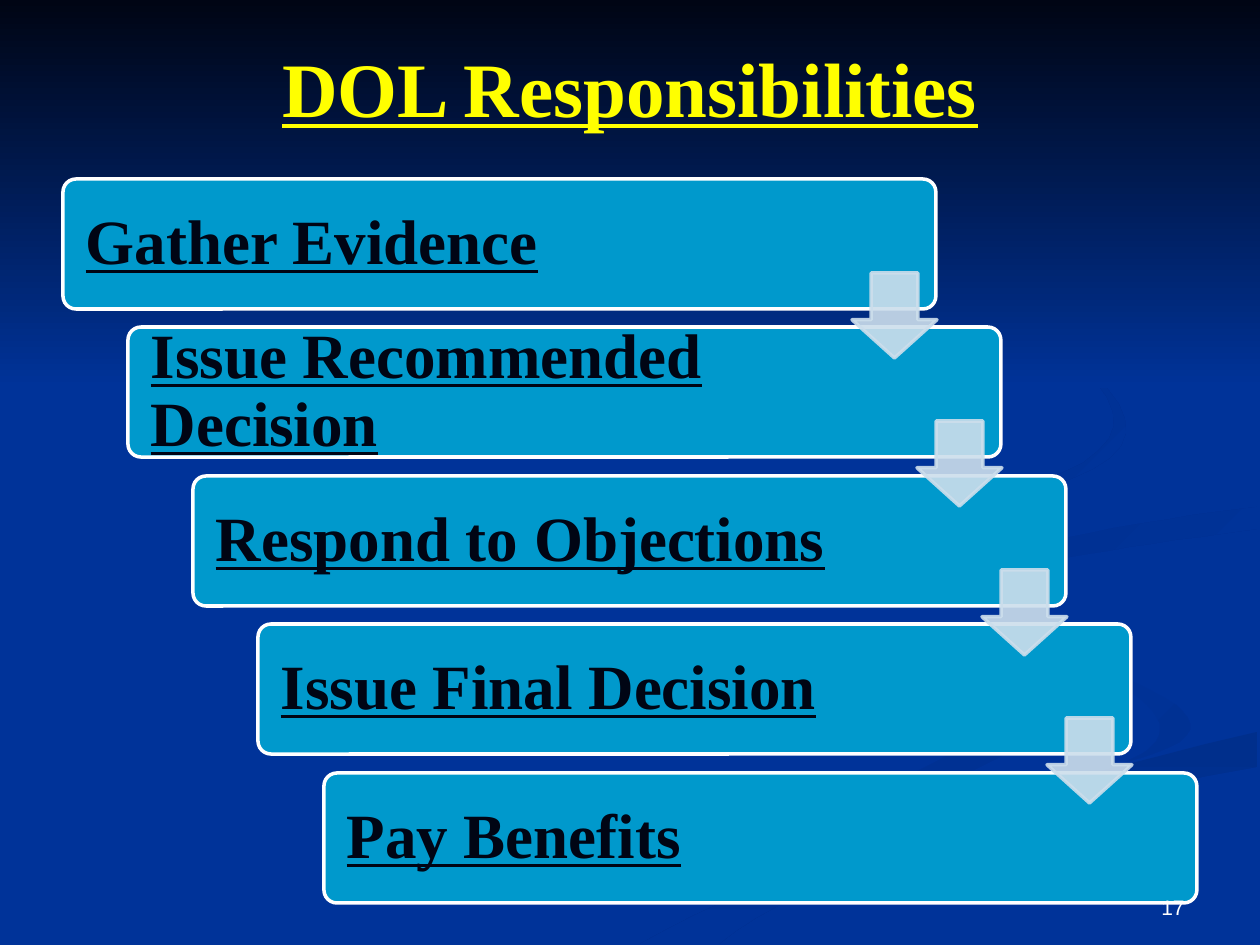
from lxml.etree import SubElement
from pptx import Presentation
from pptx.dml.color import RGBColor
from pptx.enum.shapes import MSO_SHAPE as Shape
from pptx.enum.text import MSO_ANCHOR as Anchor, PP_ALIGN as Align
from pptx.oxml.ns import qn
from pptx.util import Emu, Pt

PX = 914400 // 126
BLUE, NAVY, PALE, WHITE = "003399", "000514", "CCDEEC", "FFFFFF"
SERIF = "Times New Roman"

STEPS = ["Gather Evidence", "Issue Recommended Decision", "Respond to Objections",
         "Issue Final Decision", "Pay Benefits"]

# Start colour, end colour, clockwise angle, then two edges: start, control, end
SWIRLS = [
    (BLUE, "003193", 0, [(984, 697), (1200, 750), (378, 944)],
     [(455, 944), (1060, 750), (984, 697)]),
    (BLUE, "003193", 45, [(1071, 660), (1278, 725), (1126, 762)],
     [(1126, 762), (1216, 725), (1071, 660)]),
    ("002F8C", BLUE, 90, [(640, 944), (840, 830), (1257, 732)],
     [(1257, 767), (850, 840), (719, 944)]),
    ("003091", BLUE, 45, [(1257, 507), (985, 540), (985, 580)],
     [(985, 580), (1020, 560), (1257, 529)]),
    ("002F8E", BLUE, 45, [(960, 294), (1310, 464), (924, 509)],
     [(924, 509), (1285, 450), (960, 294)]),
]


def px(*lengths):
    return [Emu(length * PX) for length in lengths]


def rgb(code):
    return RGBColor.from_string(code)


def set_all(target, values):
    for name, value in values.items():
        setattr(target, name, value)


def paint(shape, fill, line):
    shape.shadow.inherit = False
    shape.fill.solid()
    shape.fill.fore_color.rgb = rgb(fill)
    shape.line.color.rgb = rgb(line)
    shape.line.width = Pt(2)


def paint_gradient(shape, start, end, angle):
    """Blend two colours along a clockwise angle, without a line."""
    shape.shadow.inherit = False
    shape.line.fill.background()
    shape.fill.gradient()
    shape.fill.gradient_angle = (360 - angle) % 360
    for stop, code in zip(shape.fill.gradient_stops, (start, end)):
        stop.color.rgb = rgb(code)


def curve(start, control, end, pieces=16):
    """Points along a quadratic Bézier curve."""
    steps = [i / pieces for i in range(pieces + 1)]
    return [tuple(round((1 - t) ** 2 * a + 2 * t * (1 - t) * b + t * t * c)
                  for a, b, c in zip(start, control, end)) for t in steps]


def add_swirl(page, start, end, angle, there, back):
    outline = curve(*there) + curve(*back)
    builder = page.shapes.build_freeform(*outline[0], scale=PX)
    builder.add_line_segments(outline[1:], close=True)
    paint_gradient(builder.convert_to_shape(), start, end, angle)


def add_backdrop(page):
    page.background.fill.solid()
    page.background.fill.fore_color.rgb = rgb(BLUE)
    for swirl in SWIRLS:
        add_swirl(page, *swirl)
    sky = page.shapes.add_shape(Shape.RECTANGLE, *px(0, 0, 1260, 388))
    paint_gradient(sky, NAVY, BLUE, 90)


def write(box, text, color, align, anchor, font, **frame):
    set_all(box.text_frame, {"word_wrap": True, "vertical_anchor": anchor, **frame})
    para = box.text_frame.paragraphs[0]
    para.alignment = align
    span = para.add_run()
    span.text = text
    set_all(span.font, font)
    span.font.color.rgb = rgb(color)
    return para


def heading_font(size):
    return {"name": SERIF, "size": Pt(size), "bold": True, "underline": True}


def add_title(page, text):
    title = page.shapes.title
    set_all(title, dict(zip(("left", "top", "width", "height"), px(63, 38, 1134, 98))))
    write(title, text, "FFFF00", Align.CENTER, Anchor.MIDDLE, heading_font(44))
    # Bring the title in front of the backdrop
    title.element.getparent().append(title.element)


def add_step(page, text, left, top):
    box = page.shapes.add_shape(Shape.ROUNDED_RECTANGLE, *px(left, top, 873, 130))
    box.adjustments[0] = 0.1
    paint(box, "0099CC", WHITE)
    margins = zip(("margin_left", "margin_right", "margin_top", "margin_bottom"),
                  px(19, 168, 19, 19))
    para = write(box, text, NAVY, Align.LEFT, Anchor.MIDDLE, heading_font(36),
                 **dict(margins))
    para.line_spacing = 0.9


def add_arrow(page, left, top):
    arrow = page.shapes.add_shape(Shape.DOWN_ARROW, *px(left, top, 85, 85))
    arrow.adjustments[0], arrow.adjustments[1] = 0.55, 0.45
    paint(arrow, PALE, PALE)
    for color in arrow.element.spPr.iter(qn("a:srgbClr")):
        SubElement(color, qn("a:alpha"), val="90000")


def add_page_number(page, number):
    box = page.shapes.add_textbox(*px(903, 861, 294, 65))
    write(box, number, WHITE, Align.RIGHT, Anchor.BOTTOM, {"name": "Arial", "size": Pt(12)})


def main():
    deck = Presentation()
    deck.slide_width, deck.slide_height = px(1260, 945)
    page = deck.slides.add_slide(deck.slide_layouts[5])
    add_backdrop(page)
    add_title(page, "DOL Responsibilities")
    corners = [(63 + 261 * i // 4, 179 + 594 * i // 4) for i in range(len(STEPS))]
    for text, (left, top) in zip(STEPS, corners):
        add_step(page, text, left, top)
    for left, top in corners[:-1]:
        add_arrow(page, left + 789, top + 94)
    add_page_number(page, "17")
    deck.save("out.pptx")


if __name__ == "__main__":
    main()
